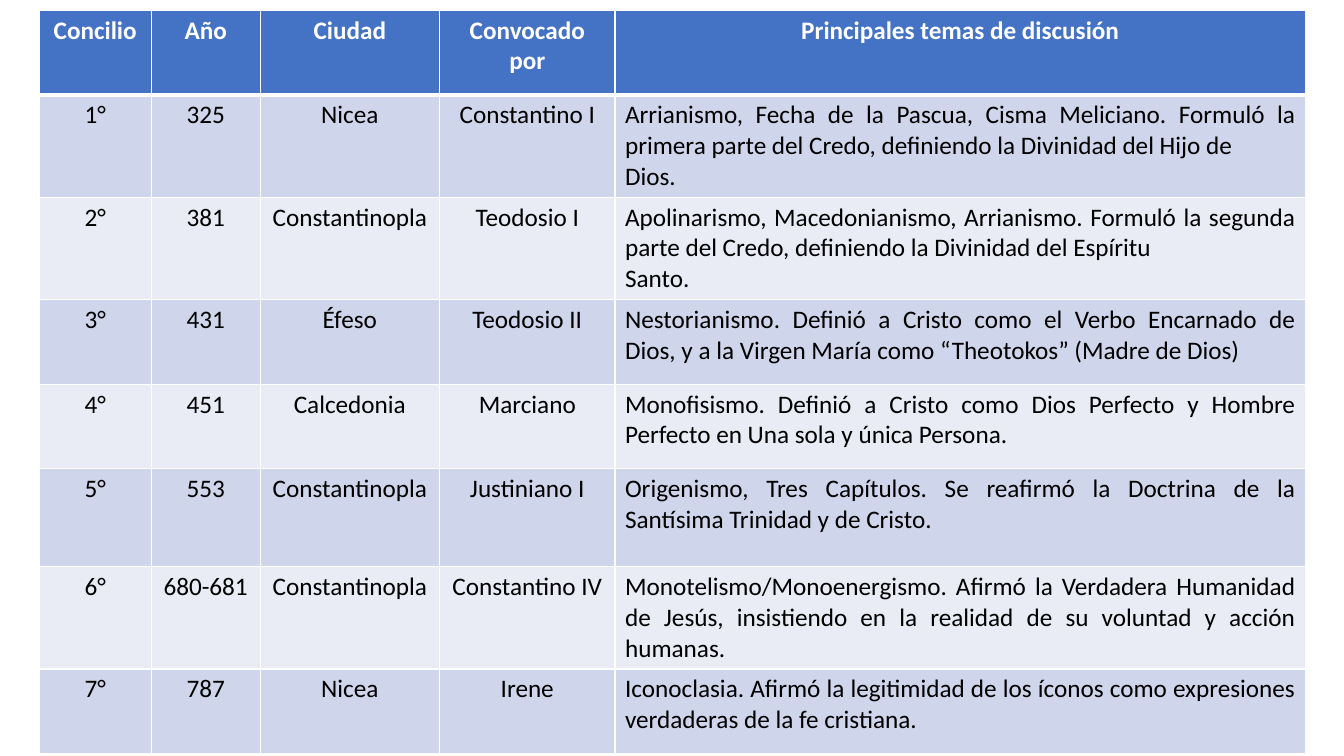
from pptx import Presentation, util as u
from pptx.dml.color import RGBColor
from pptx.enum import text
from pptx.oxml import parse_xml
from pptx.oxml.ns import nsdecls

HEADINGS = ("Concilio", "Año", "Ciudad", "Convocado por", "Principales temas de discusión")
COUNCILS = [
    ("1°", "325", "Nicea", "Constantino I",
     "Arrianismo, Fecha de la Pascua, Cisma Meliciano. Formuló la primera parte del Credo, "
     "definiendo la Divinidad del Hijo de\nDios."),
    ("2°", "381", "Constantinopla", "Teodosio I",
     "Apolinarismo, Macedonianismo, Arrianismo. Formuló la segunda parte del Credo, "
     "definiendo la Divinidad del Espíritu\nSanto."),
    ("3°", "431", "Éfeso", "Teodosio II",
     "Nestorianismo. Definió a Cristo como el Verbo Encarnado de Dios, y a la Virgen María "
     "como “Theotokos” (Madre de Dios)"),
    ("4°", "451", "Calcedonia", "Marciano",
     "Monofisismo. Definió a Cristo como Dios Perfecto y Hombre Perfecto en Una sola y única "
     "Persona."),
    ("5°", "553", "Constantinopla", "Justiniano I",
     "Origenismo, Tres Capítulos. Se reafirmó la Doctrina de la Santísima Trinidad y de Cristo."),
    ("6°", "680-681", "Constantinopla", "Constantino IV",
     "Monotelismo/Monoenergismo. Afirmó la Verdadera Humanidad de Jesús, insistiendo en la "
     "realidad de su voluntad y acción humanas."),
    ("7°", "787", "Nicea", "Irene",
     "Iconoclasia. Afirmó la legitimidad de los íconos como expresiones verdaderas de la fe "
     "cristiana."),
]

THEME = {
    "font": "Calibri", "size": 18, "heading_text": "FFFFFF", "body_text": "000000",
    "heading_fill": "4472C4", "bands": ("E9EBF5", "CFD5EA"),
    "border": "FFFFFF", "thin": 1, "thick": 3,
}

PX = u.Inches(1) // 100
SLIDE_SIZE = (1333, 750)
TABLE_LEFT, TABLE_TOP = 39, 10
COLUMN_WIDTHS = (111, 108, 178, 174, 685)
ROW_HEIGHTS = (84, 84, 84, 84, 84, 97, 84, 84)


def add_borders(cell, row):
    """Draw white borders, thick between the heading row and the first council."""
    widths = dict.fromkeys("LRTB", THEME["thin"])
    if row < 2:
        widths["B" if row == 0 else "T"] = THEME["thick"]
    properties = cell._tc.get_or_add_tcPr()
    for index, (side, width) in enumerate(widths.items()):
        properties.insert(index, parse_xml(
            f'<a:ln{side} {nsdecls("a")} w="{u.Pt(width)}"><a:solidFill>'
            f'<a:srgbClr val="{THEME["border"]}"/></a:solidFill></a:ln{side}>'))


def fill_cell(cell, row, column, content):
    heading = row == 0
    color = THEME["heading_fill"] if heading else THEME["bands"][row % 2]
    cell.fill.solid()
    cell.fill.fore_color.rgb = RGBColor.from_string(color)
    add_borders(cell, row)
    justified = not heading and column == len(HEADINGS) - 1
    cell.text_frame.text = content
    for para in cell.text_frame.paragraphs:
        para.alignment = text.PP_ALIGN.JUSTIFY if justified else text.PP_ALIGN.CENTER
        for span in para.runs:
            span.font.name = THEME["font"]
            span.font.size = u.Pt(THEME["size"])
            span.font.bold = heading
            span.font.color.rgb = RGBColor.from_string(
                THEME["heading_text" if heading else "body_text"])


def main():
    deck = Presentation()
    deck.slide_width, deck.slide_height = (side * PX for side in SLIDE_SIZE)
    page = deck.slides.add_slide(deck.slide_layouts[6])
    rows = [HEADINGS, *COUNCILS]
    table = page.shapes.add_table(
        len(rows), len(HEADINGS), TABLE_LEFT * PX, TABLE_TOP * PX,
        sum(COLUMN_WIDTHS) * PX, sum(ROW_HEIGHTS) * PX).table
    for column, width in zip(table.columns, COLUMN_WIDTHS):
        column.width = width * PX
    for line, height in zip(table.rows, ROW_HEIGHTS):
        line.height = height * PX
    for row, contents in enumerate(rows):
        for column, content in enumerate(contents):
            fill_cell(table.cell(row, column), row, column, content)
    deck.save("out.pptx")


if __name__ == "__main__":
    main()
